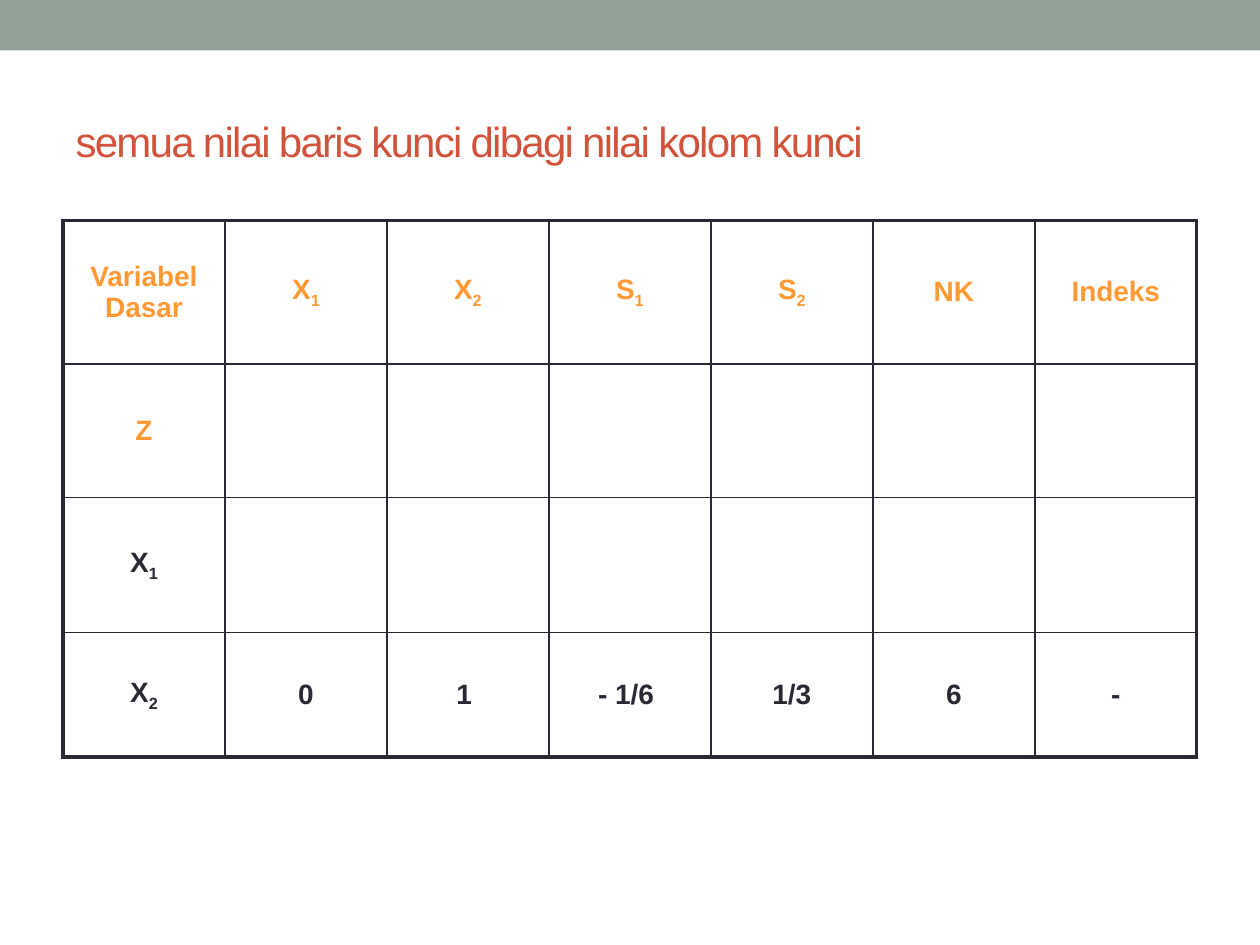
from lxml import etree
from pptx import Presentation
from pptx import util as u
from pptx.dml.color import RGBColor
from pptx.enum import shapes, text
from pptx.oxml.ns import qn

FONT = "Arial"
SAGE, RED, ORANGE, DARK, WHITE = "93A299", "D2533C", "FF9933", "292934", "FFFFFF"
THIN, THICK = 1, 2.25

# A digit after "_" is a subscript
ROWS = [
    ["Variabel Dasar", "X_1", "X_2", "S_1", "S_2", "NK", "Indeks"],
    ["Z"] + [""] * 6,
    ["X_1"] + [""] * 6,
    ["X_2", "0", "1 ", "- 1/6 ", "1/3", "6", "-"],
]
ROW_HEIGHTS = [1.14, 1.06, 1.07, 0.99]


def color(value):
    return RGBColor.from_string(value)


def add_band(page, left, top, width, height):
    band = page.shapes.add_shape(
        shapes.MSO_SHAPE.RECTANGLE,
        u.Inches(left), u.Inches(top), u.Inches(width), u.Inches(height))
    band.shadow.inherit = False
    band.fill.solid()
    band.fill.fore_color.rgb = color(SAGE)
    band.line.fill.background()


def set_title(page, left, top, width, height, wording):
    title = page.shapes.title
    title.left, title.top = u.Inches(left), u.Inches(top)
    title.width, title.height = u.Inches(width), u.Inches(height)
    frame = title.text_frame
    frame.vertical_anchor = text.MSO_ANCHOR.MIDDLE
    para = frame.paragraphs[0]
    para.alignment = text.PP_ALIGN.LEFT
    span = para.add_run()
    span.text = wording
    para.font.name, para.font.size = FONT, u.Pt(24)
    para.font.color.rgb = color(RED)
    # Tighten the letters by one point
    span.font._element.set("spc", "-100")


def set_borders(cell, widths):
    properties = cell._tc.get_or_add_tcPr()
    for side, width in widths.items():
        line = etree.SubElement(properties, qn(f"a:ln{side}"), w=str(u.Pt(width)))
        fill = etree.SubElement(line, qn("a:solidFill"))
        etree.SubElement(fill, qn("a:srgbClr"), val=DARK)


def write_cell(cell, wording, ink):
    cell.vertical_anchor = text.MSO_ANCHOR.MIDDLE
    cell.margin_left = cell.margin_right = u.Inches(0.12)
    cell.margin_top = cell.margin_bottom = u.Inches(0.05)
    para = cell.text_frame.paragraphs[0]
    para.alignment = text.PP_ALIGN.CENTER
    para.font.name, para.font.size, para.font.bold = FONT, u.Pt(16), True
    para.font.color.rgb = color(ink)
    base, _, subscript = wording.partition("_")
    if base:
        para.add_run().text = base
    if subscript:
        span = para.add_run()
        span.text = subscript
        span.font._element.set("baseline", "-25000")


def add_simplex_table(page, left, top, width):
    last_row, last_col = len(ROWS) - 1, len(ROWS[0]) - 1
    table = page.shapes.add_table(
        len(ROWS), len(ROWS[0]), u.Inches(left), u.Inches(top),
        u.Inches(width), u.Inches(sum(ROW_HEIGHTS))).table
    table.first_row = table.horz_banding = False
    for row, height in zip(table.rows, ROW_HEIGHTS):
        row.height = u.Inches(height)

    for r, row in enumerate(ROWS):
        for c, wording in enumerate(row):
            cell = table.cell(r, c)
            # Thick outer frame, thin inner grid
            set_borders(cell, {
                "L": THICK if c == 0 else THIN,
                "R": THICK if c == last_col else THIN,
                "T": THICK if r == 0 else THIN,
                "B": THICK if r == last_row else THIN,
            })
            # White behind the key row's values and the key column
            if (r == last_row and c > 0) or (r > 0 and c == 2):
                cell.fill.solid()
                cell.fill.fore_color.rgb = color(WHITE)
            else:
                cell.fill.background()
            write_cell(cell, wording, ORANGE if r < 2 else DARK)


def main():
    deck = Presentation()
    deck.slide_width, deck.slide_height = u.Inches(10), u.Inches(7.5)
    page = deck.slides.add_slide(deck.slide_layouts[5])
    add_band(page, 0, 0, 10, 0.4)
    set_title(page, 0.5, 0.58, 9, 1.08,
              "semua nilai baris kunci dibagi nilai kolom kunci")
    add_simplex_table(page, 0.5, 1.75, 9)
    deck.save("out.pptx")


if __name__ == "__main__":
    main()
